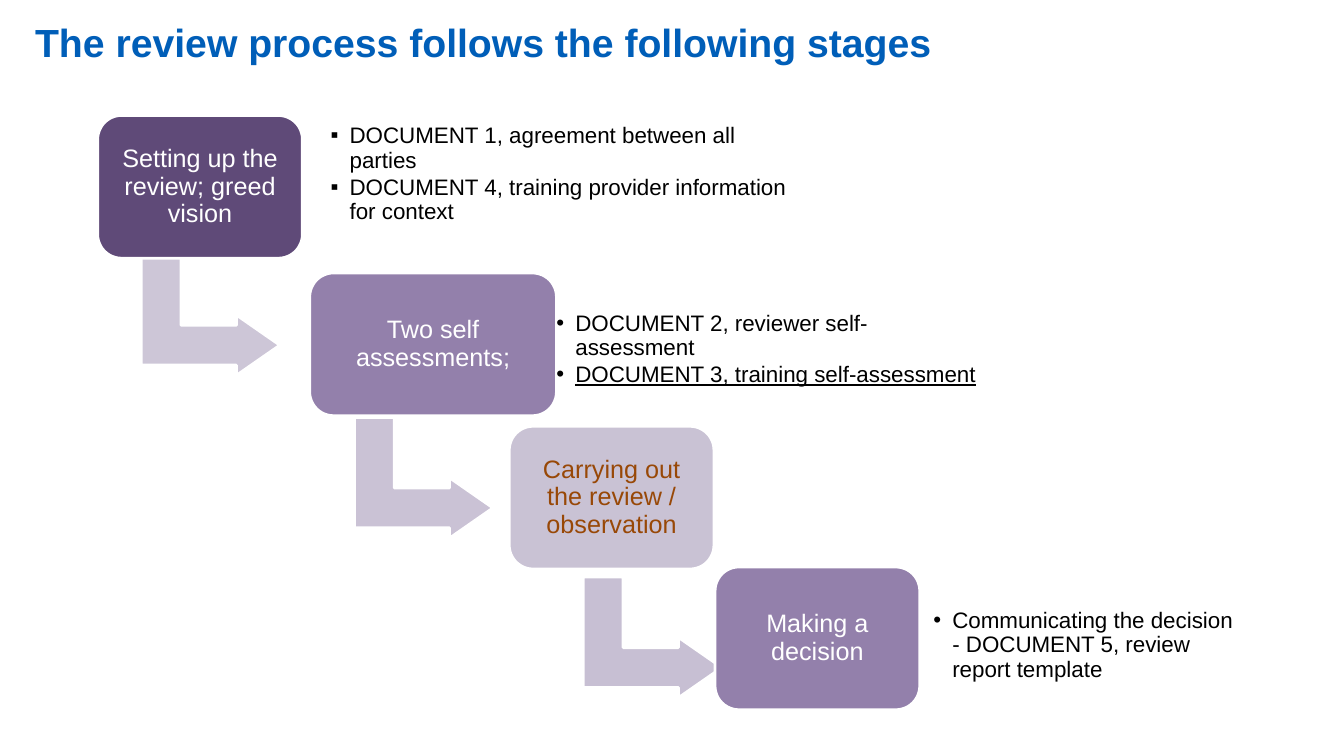
from lxml.etree import SubElement
from pptx import Presentation
from pptx.dml.color import RGBColor
from pptx.enum.shapes import MSO_SHAPE as Preset
from pptx.enum.text import MSO_ANCHOR as Anchor, MSO_AUTO_SIZE as AutoSize, PP_ALIGN as Align
from pptx.oxml.ns import qn
from pptx.util import Pt

PX = 9525
FONT = "Arial"
INSET = 7
BOX_HEIGHT = 136
ARROW_SIZE = (115, 132)
DOCUMENTS_HEIGHT = 110
BULLET_INDENT = 18

STAGES = [
    {"label": "Setting up the review; greed vision", "box": (93, 110, 195),
     "fill": "5F4A78", "color": "FFFFFF", "arrow": (50, 124, "CDC6D7"),
     "documents": (215, 1, 464), "bullet": "▪",
     "items": ["DOCUMENT 1, agreement between all parties",
               "DOCUMENT 4, training provider information for context"]},
    {"label": "Two self assessments;", "box": (295, 260, 235),
     "fill": "9380AB", "color": "FFFFFF", "arrow": (51, 129, "CAC2D5"),
     "documents": (228, 18, 423), "bullet": "•", "underlined": 1,
     "items": ["DOCUMENT 2, reviewer self-assessment",
               "DOCUMENT 3, training self-assessment"]},
    {"label": "Carrying out the review / observation", "box": (485, 406, 195),
     "fill": "C9C2D4", "color": "984807", "arrow": (79, 135, "C7BFD3")},
    {"label": "Making a decision", "box": (681, 540, 195),
     "fill": "9380AB", "color": "FFFFFF",
     "documents": (201, 20, 311), "bullet": "•",
     "items": ["Communicating the decision - DOCUMENT 5, review report template"]},
]


def rgb(value):
    return RGBColor.from_string(value)


def emu(*lengths):
    return [length * PX for length in lengths]


def style_font(font, size, color, bold=False):
    font.name = FONT
    font.size = Pt(size)
    font.bold = bold
    font.color.rgb = rgb(color)


def set_frame(text_frame):
    text_frame.word_wrap = True
    text_frame.vertical_anchor = Anchor.MIDDLE
    text_frame.margin_left = text_frame.margin_right = INSET * PX
    text_frame.margin_top = text_frame.margin_bottom = INSET * PX


def add_preset(slide, preset, box, fill, adjustments):
    shape = slide.shapes.add_shape(preset, *emu(*box))
    shape.shadow.inherit = False
    shape.fill.solid()
    shape.fill.fore_color.rgb = rgb(fill)
    shape.line.color.rgb = rgb("FFFFFF")
    shape.line.width = Pt(2)
    for index, value in enumerate(adjustments):
        shape.adjustments[index] = value
    return shape


def add_title(slide, box, text):
    text_frame = slide.shapes.add_textbox(*emu(*box)).text_frame
    text_frame.word_wrap = True
    text_frame.auto_size = AutoSize.SHAPE_TO_FIT_TEXT
    text_frame.text = text
    style_font(text_frame.paragraphs[0].runs[0].font, 28, "005EB8", bold=True)


def add_bullet(paragraph, character):
    properties = paragraph._p.get_or_add_pPr()
    properties.set("marL", str(BULLET_INDENT * PX))
    properties.set("indent", str(-BULLET_INDENT * PX))
    SubElement(properties, qn("a:buFont")).set("typeface", FONT)
    SubElement(properties, qn("a:buChar")).set("char", character)


def add_documents(slide, box, items, bullet, underlined=None):
    text_frame = slide.shapes.add_textbox(*emu(*box)).text_frame
    set_frame(text_frame)
    text_frame.text = "\n".join(items)
    for index, paragraph in enumerate(text_frame.paragraphs):
        paragraph.level = 1
        paragraph.line_spacing = 0.9
        paragraph.space_after = Pt(2)
        add_bullet(paragraph, bullet)
        font = paragraph.runs[0].font
        style_font(font, 16, "000000")
        if index == underlined:
            font.underline = True


def add_stage(slide, stage):
    left, top, width = stage["box"]
    if "arrow" in stage:
        across, down, fill = stage["arrow"]
        arrow = add_preset(slide, Preset.BENT_UP_ARROW,
                           (left + across, top + down, *ARROW_SIZE),
                           fill, (0.33, 0.25, 0.36))
        arrow.rotation = 90
    shape = add_preset(slide, Preset.ROUNDED_RECTANGLE,
                       (left, top, width, BOX_HEIGHT), stage["fill"], (0.167,))
    set_frame(shape.text_frame)
    shape.text_frame.text = stage["label"]
    paragraph = shape.text_frame.paragraphs[0]
    paragraph.alignment = Align.CENTER
    paragraph.line_spacing = 0.9
    style_font(paragraph.runs[0].font, 18, stage["color"])
    if "items" in stage:
        across, down, documents_width = stage["documents"]
        add_documents(slide,
                      (left + across, top + down, documents_width, DOCUMENTS_HEIGHT),
                      stage["items"], stage["bullet"], stage.get("underlined"))


def main():
    presentation = Presentation()
    presentation.slide_width, presentation.slide_height = emu(1280, 720)
    slide = presentation.slides.add_slide(presentation.slide_layouts[6])
    add_title(slide, (24, 13, 976, 55), "The review process follows the following stages")
    for stage in STAGES:
        add_stage(slide, stage)
    presentation.save("out.pptx")


if __name__ == "__main__":
    main()
